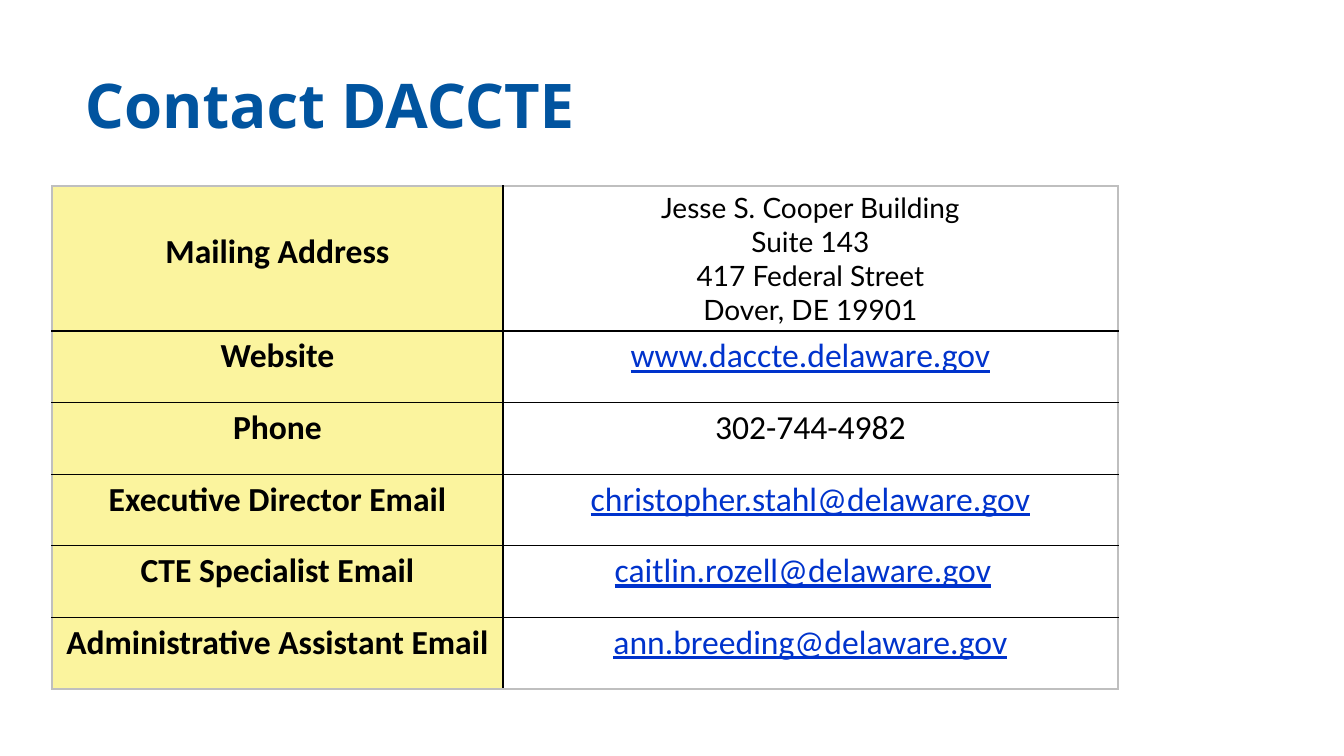
from dataclasses import dataclass

from lxml import etree
from pptx import Presentation
from pptx import util as u
from pptx.dml.color import RGBColor
from pptx.enum import text
from pptx.oxml.ns import qn


@dataclass(frozen=True)
class Theme:
    title: str = "01549F"
    ink: str = "000000"
    link: str = "0033CC"
    label_fill: str = "FBF49E"
    value_fill: str = "FFFFFF"
    inner_line: str = "000000"
    outer_line: str = "BFBFBF"
    title_font: str = "Noto Sans"
    body_font: str = "Calibri"
    address_font: str = "Lato"
    title_size: int = 44
    body_size: int = 24
    address_size: int = 20
    line_width: int = 1


THEME = Theme()
ADDRESS = ["Jesse S. Cooper Building", "Suite 143", "417 Federal Street", "Dover, DE 19901"]
CONTACTS = [
    ("Mailing Address", ADDRESS),
    ("Website", ["www.daccte.delaware.gov"]),
    ("Phone", ["302-744-4982"]),
    ("Executive Director Email", ["christopher.stahl@delaware.gov"]),
    ("CTE Specialist Email", ["caitlin.rozell@delaware.gov"]),
    ("Administrative Assistant Email", ["ann.breeding@delaware.gov"]),
]


def px(length):
    return u.Emu(round(length * 914400 / 100.8))


def style(para, font, size, color, bold=False, underline=False):
    para.font.name = font
    para.font.size = u.Pt(size)
    para.font.bold = bold
    para.font.underline = underline
    para.font.color.rgb = RGBColor.from_string(color)


def add_title(page, words):
    box = page.shapes.add_textbox(px(75), px(67), px(1020), px(145))
    frame = box.text_frame
    frame.word_wrap = True
    frame.margin_top = 0
    para = frame.paragraphs[0]
    para.text = words
    style(para, THEME.title_font, THEME.title_size, THEME.title, bold=True)


def set_borders(cell, colors):
    properties = cell._tc.get_or_add_tcPr()
    for index, (side, color) in enumerate(colors.items()):
        line = etree.Element(qn(f"a:{side}"), w=str(u.Pt(THEME.line_width)))
        fill = etree.SubElement(line, qn("a:solidFill"))
        etree.SubElement(fill, qn("a:srgbClr"), val=color)
        properties.insert(index, line)


def fill_cell(cell, lines, fill, **look):
    cell.fill.solid()
    cell.fill.fore_color.rgb = RGBColor.from_string(fill)
    cell.vertical_anchor = text.MSO_ANCHOR.TOP
    cell.margin_left = cell.margin_right = px(10)
    cell.margin_top = cell.margin_bottom = px(5)
    cell.text = "\n".join(lines)
    for para in cell.text_frame.paragraphs:
        para.alignment = text.PP_ALIGN.CENTER
        style(para, **look)


def value_look(lines):
    if len(lines) > 1:
        return dict(font=THEME.address_font, size=THEME.address_size, color=THEME.ink)
    linked = lines[0].endswith(".gov")
    return dict(font=THEME.body_font, size=THEME.body_size,
                color=THEME.link if linked else THEME.ink, underline=linked)


def add_contacts(page):
    count = len(CONTACTS)
    frame = page.shapes.add_table(count, 2, px(52), px(186), px(1066), px(503))
    table = frame.table
    table.first_row = table.horz_banding = False
    table.columns[0].width, table.columns[1].width = px(451), px(615)
    for index, (label, lines) in enumerate(CONTACTS):
        table.rows[index].height = px(358 / (count - 1)) if index else px(145)
        label_cell, value_cell = table.cell(index, 0), table.cell(index, 1)
        fill_cell(label_cell, [label], THEME.label_fill, font=THEME.body_font,
                  size=THEME.body_size, color=THEME.ink, bold=True)
        fill_cell(value_cell, lines, THEME.value_fill, **value_look(lines))
        for column, cell in enumerate((label_cell, value_cell)):
            outer = {"lnL": column == 0, "lnR": column == 1,
                     "lnT": index == 0, "lnB": index == count - 1}
            set_borders(cell, {side: THEME.outer_line if edge else THEME.inner_line
                               for side, edge in outer.items()})
    table.cell(0, 0).margin_top = px(46)
    table.cell(4, 1).margin_right = px(25)


def main():
    deck = Presentation()
    deck.slide_width, deck.slide_height = px(1344), px(756)
    page = deck.slides.add_slide(deck.slide_layouts[6])
    add_title(page, "Contact DACCTE")
    add_contacts(page)
    deck.save("out.pptx")


if __name__ == "__main__":
    main()
